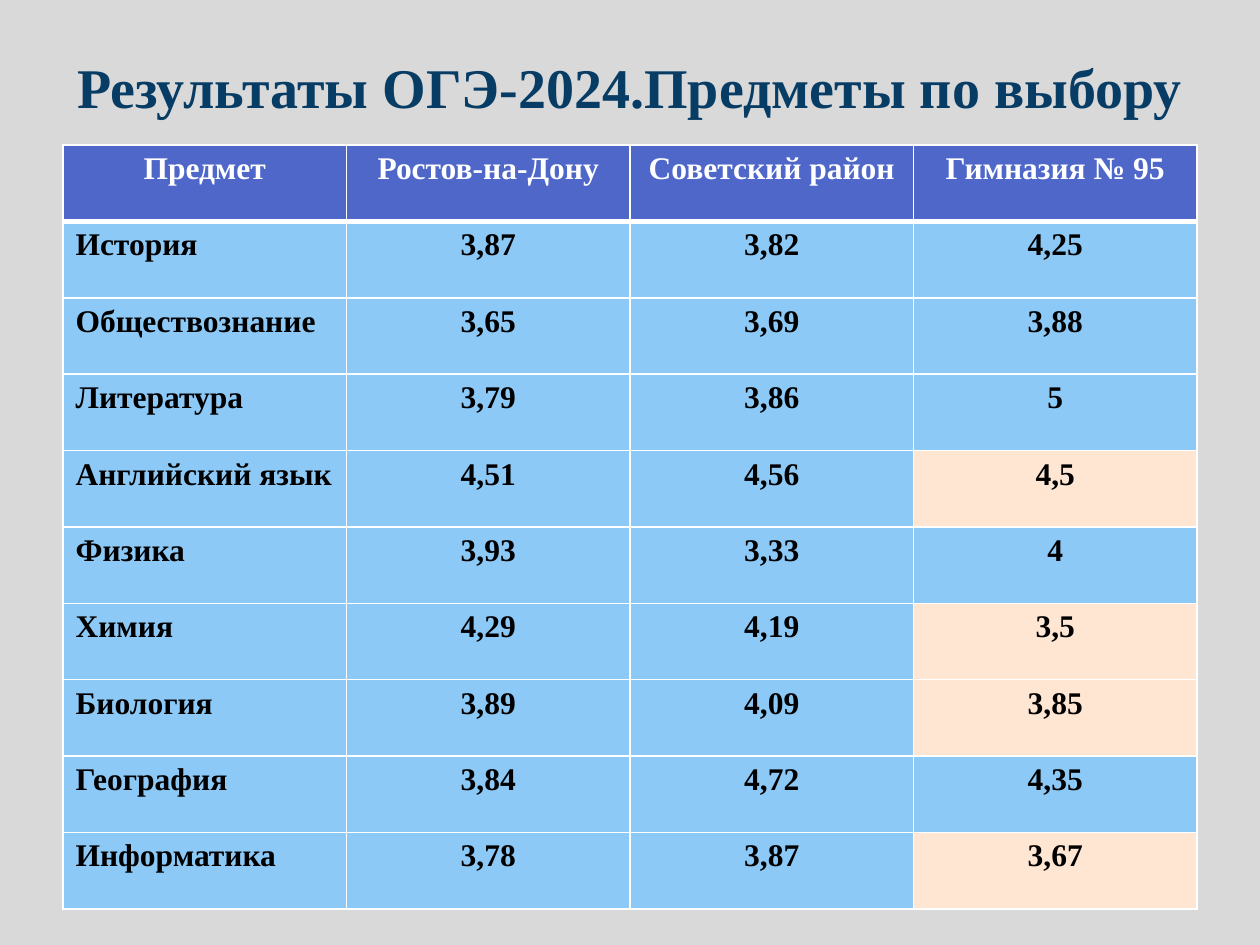
from pptx import Presentation
from pptx.dml.color import RGBColor
from pptx.enum.text import MSO_ANCHOR as Anchor, PP_ALIGN as Align
from pptx.oxml.ns import qn
from pptx.util import Pt
from lxml.etree import SubElement

EMU_PER_PX = 914400 / 126
FONT = "Times New Roman"
GREY = RGBColor(0xD9, 0xD9, 0xD9)
NAVY = RGBColor(0x07, 0x3C, 0x65)
INDIGO = RGBColor(0x4E, 0x67, 0xC8)
SKY = RGBColor(0x8C, 0xC9, 0xF7)
PEACH = RGBColor(0xFF, 0xE6, 0xD3)
WHITE = RGBColor(0xFF, 0xFF, 0xFF)
BLACK = RGBColor(0, 0, 0)

HEADERS = ["Предмет", "Ростов-на-Дону", "Советский район", "Гимназия № 95"]
RESULTS = [
    ("История", "3,87", "3,82", "4,25"),
    ("Обществознание", "3,65", "3,69", "3,88"),
    ("Литература", "3,79", "3,86", "5"),
    ("Английский язык", "4,51", "4,56", "4,5"),
    ("Физика", "3,93", "3,33", "4"),
    ("Химия", "4,29", "4,19", "3,5"),
    ("Биология", "3,89", "4,09", "3,85"),
    ("География", "3,84", "4,72", "4,35"),
    ("Информатика", "3,78", "3,87", "3,67"),
]


def px(length):
    return round(length * EMU_PER_PX)


def format_text(frame, size, color, align):
    para = frame.paragraphs[0]
    para.alignment = align
    font = para.runs[0].font
    font.name, font.size, font.bold = FONT, Pt(size), True
    font.color.rgb = color


def set_borders(cell, top, bottom):
    """White lines on all four sides; they precede the fill in the XML."""
    props = cell._tc.get_or_add_tcPr()
    for side, width in (("L", 1), ("R", 1), ("T", top), ("B", bottom)):
        line = SubElement(props, qn(f"a:ln{side}"), w=str(Pt(width)))
        fill = SubElement(line, qn("a:solidFill"))
        SubElement(fill, qn("a:srgbClr"), val=str(WHITE))


def add_title(page, left, top, width, height):
    title = page.shapes.title
    title.left, title.top = px(left), px(top)
    title.width, title.height = px(width), px(height)
    frame = title.text_frame
    frame.text = "Результаты ОГЭ-2024.Предметы по выбору"
    frame.word_wrap = True
    frame.margin_left = frame.margin_right = 0
    frame.vertical_anchor = Anchor.MIDDLE
    format_text(frame, 32, NAVY, Align.CENTER)


def score(text):
    return float(text.replace(",", "."))


def cell_fill(row, column, values):
    if row == 0:
        return INDIGO
    # The school's result stands out where it is below the city's
    if column == 3 and score(values[3]) < score(values[1]):
        return PEACH
    return SKY


def add_results(page, left, top, width, height):
    rows = [HEADERS, *RESULTS]
    table = page.shapes.add_table(len(rows), len(HEADERS), px(left), px(top),
                                  px(width), px(height)).table
    for column in table.columns:
        column.width = px(width / len(HEADERS))
    for row, values in enumerate(rows):
        table.rows[row].height = px(height / len(rows))
        for column, text in enumerate(values):
            cell = table.cell(row, column)
            cell.text = text
            is_subject = row > 0 and column == 0
            format_text(cell.text_frame, 18, BLACK if row else WHITE,
                        Align.LEFT if is_subject else Align.CENTER)
            set_borders(cell, 3 if row == 1 else 1, 3 if row == 0 else 1)
            cell.fill.solid()
            cell.fill.fore_color.rgb = cell_fill(row, column, values)


def main():
    deck = Presentation()
    deck.slide_width, deck.slide_height = px(1260), px(945)
    page = deck.slides.add_slide(deck.slide_layouts[5])
    page.background.fill.solid()
    page.background.fill.fore_color.rgb = GREY
    add_title(page, 63, 38, 1134, 97)
    add_results(page, 63, 145, 1134, 764)
    deck.save("out.pptx")


if __name__ == "__main__":
    main()
